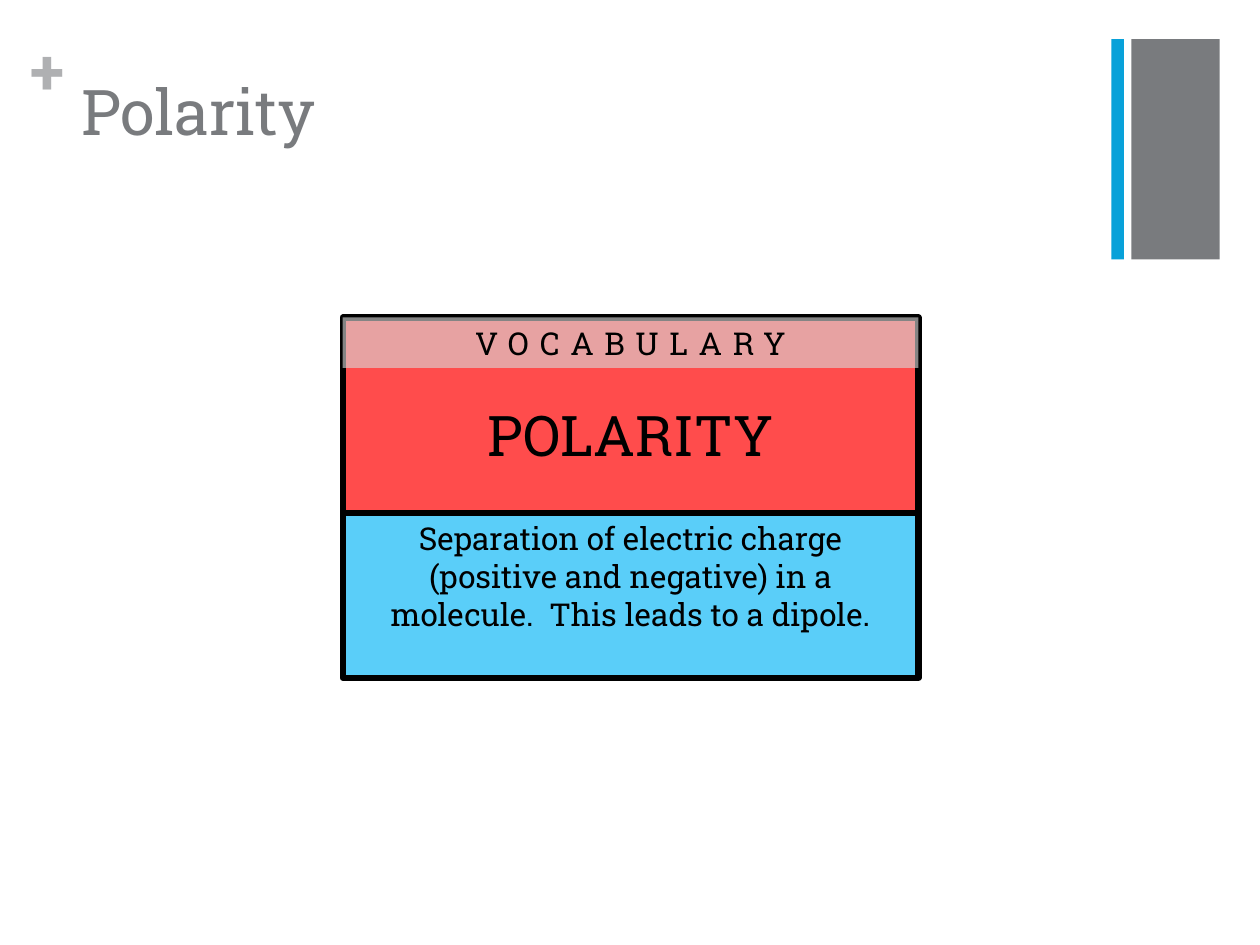
from lxml.etree import SubElement
from pptx import Presentation
from pptx.dml.color import RGBColor
from pptx.enum.shapes import MSO_SHAPE
from pptx.enum.text import MSO_ANCHOR, PP_ALIGN
from pptx.oxml.ns import qn
from pptx.util import Inches, Pt

FONT = "Roboto Slab"
COLORS = {
    "gray": "797B7E",
    "plus": "AFB0B2",
    "accent": "08A1D9",
    "term": "FF0000",
    "band": "D9D9D9",
    "definition": "5ACEF9",
    "ink": "000000",
}


def color(name):
    return RGBColor.from_string(COLORS[name])


def add_rectangle(shapes, box, fill, opacity=None, border=None):
    rectangle = shapes.add_shape(MSO_SHAPE.RECTANGLE, *map(Inches, box))
    rectangle.shadow.inherit = False
    rectangle.fill.solid()
    rectangle.fill.fore_color.rgb = color(fill)
    if opacity is not None:
        solid = rectangle.fill._xPr.find(qn("a:solidFill"))
        SubElement(solid[0], qn("a:alpha"), val=str(opacity * 1000))
    if border is None:
        rectangle.line.fill.background()
    else:
        rectangle.line.color.rgb = color("ink")
        rectangle.line.width = Pt(border)
    return rectangle


def write(shape, text, size=18, ink="ink", bold=False, align=PP_ALIGN.CENTER,
          inset=(0.1, 0.05), top=None, spacing=None, wrap=True):
    frame = shape.text_frame
    frame.word_wrap = wrap
    frame.vertical_anchor = MSO_ANCHOR.TOP
    frame.margin_left = frame.margin_right = Inches(inset[0])
    frame.margin_bottom = Inches(inset[1])
    frame.margin_top = Inches(inset[1] if top is None else top)
    para = frame.paragraphs[0]
    para.alignment = align
    span = para.add_run()
    span.text = text
    span.font.name = FONT
    span.font.size = Pt(size)
    span.font.bold = bold
    span.font.color.rgb = color(ink)
    if spacing is not None:
        span.font._element.set("spc", str(spacing * 100))


def add_corner_bars(page, box):
    left, top, width, height = box
    bar, gap = 0.1, 0.06
    add_rectangle(page.shapes, (left, top, bar, height), "accent")
    block = left + bar + gap
    add_rectangle(page.shapes, (block, top, width - bar - gap, height), "gray")


def add_heading(page, box):
    left, top, width, height = box
    plus = page.shapes.add_textbox(*map(Inches, (left - 0.31, top - 0.28, 0.29, 0.61)))
    write(plus, "+", size=36, ink="plus", bold=True, align=PP_ALIGN.LEFT,
          inset=(0, 0), wrap=False)
    title = page.shapes.add_textbox(*map(Inches, box))
    write(title, "Polarity", size=36, ink="gray", align=PP_ALIGN.LEFT)


def add_vocabulary_card(page, box):
    left, top, width, height = box
    term_height, band_height, border = 1.55, 0.4, 3.5
    header = page.shapes.add_group_shape()
    term = add_rectangle(header.shapes, (left, top, width, term_height), "term",
                         opacity=70, border=border)
    write(term, "POLARITY", size=32, top=0.66)
    band = add_rectangle(header.shapes, (left, top, width, band_height), "band",
                         opacity=61)
    write(band, "VOCABULARY", spacing=6)
    definition = add_rectangle(
        page.shapes, (left, top + term_height, width, height - term_height),
        "definition", border=border)
    write(definition, "Separation of electric charge (positive and negative) in a "
                      "molecule.  This leads to a dipole.")


def main():
    deck = Presentation()
    deck.slide_width, deck.slide_height = Inches(10), Inches(7.5)
    page = deck.slides.add_slide(deck.slide_layouts[6])
    add_corner_bars(page, (8.82, 0.31, 0.86, 1.75))
    add_heading(page, (0.55, 0.53, 8.26, 1.22))
    add_vocabulary_card(page, (2.72, 2.52, 4.57, 2.86))
    deck.save("out.pptx")


if __name__ == "__main__":
    main()
